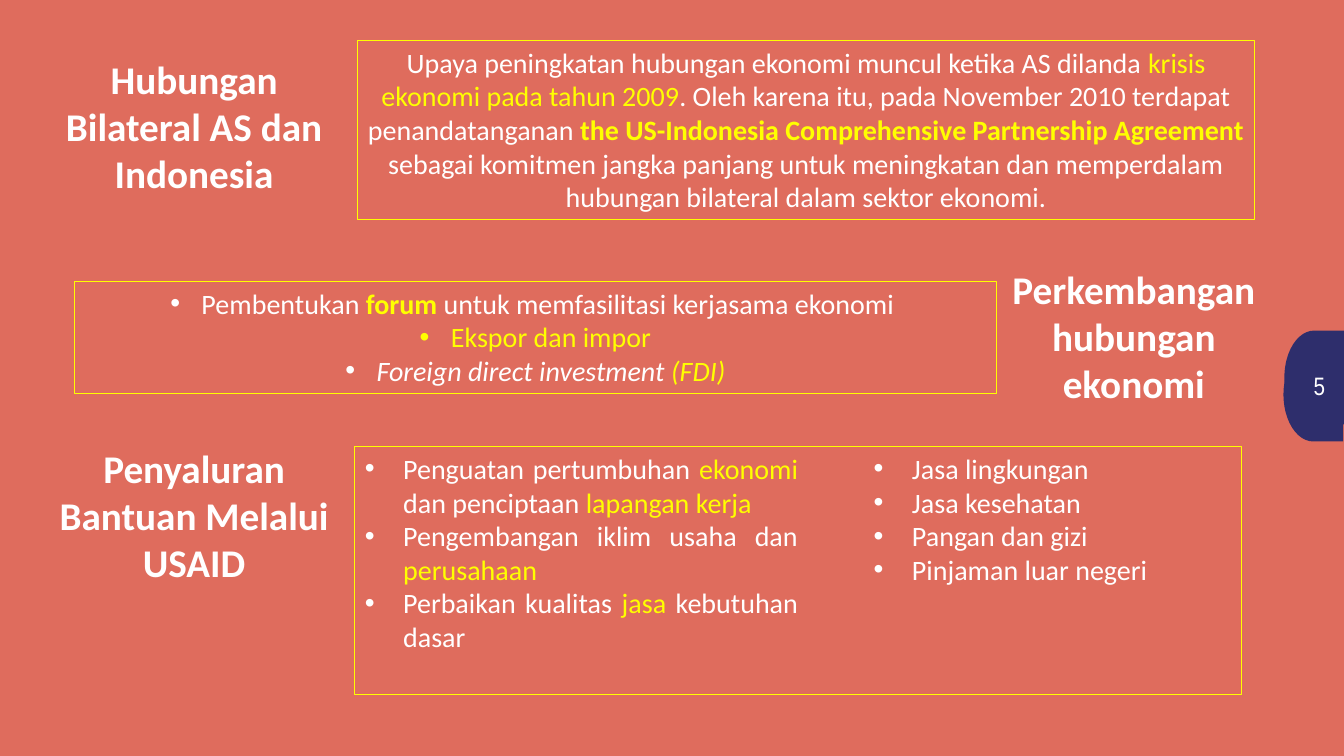
from pptx import Presentation
from pptx.dml.color import RGBColor
from pptx.enum.shapes import MSO_SHAPE
from pptx.enum.text import MSO_ANCHOR, MSO_AUTO_SIZE, PP_ALIGN
from pptx.oxml.ns import qn
from pptx.util import Inches, Pt

RECTANGLE, DELAY = MSO_SHAPE.RECTANGLE, MSO_SHAPE.FLOWCHART_DELAY
LEFT, CENTER, JUSTIFY = PP_ALIGN.LEFT, PP_ALIGN.CENTER, PP_ALIGN.JUSTIFY
TOP, NO_AUTOFIT = MSO_ANCHOR.TOP, MSO_AUTO_SIZE.NONE
CORAL, NAVY, WHITE, YELLOW = "DF6C5D", "2E2E6C", "FFFFFF", "FFFF00"

presentation = Presentation()
presentation.slide_width = Inches(13.33)
presentation.slide_height = Inches(7.5)
slide = presentation.slides.add_slide(presentation.slide_layouts[5])


def area(left, top, width, height):
    """Turn percentages of the slide into lengths."""
    across, down = presentation.slide_width / 100, presentation.slide_height / 100
    return int(left * across), int(top * down), int(width * across), int(height * down)


def write(frame, paragraphs, size, align, font="Calibri", bold=False):
    """Fill a frame; run styles are y (yellow), b (bold) and i (italic)."""
    frame.word_wrap = True
    frame.auto_size = NO_AUTOFIT
    frame.vertical_anchor = TOP
    for index, runs in enumerate(paragraphs):
        paragraph = frame.add_paragraph() if index else frame.paragraphs[0]
        paragraph.alignment = align
        paragraph.font.name = font
        paragraph.font.size = Pt(size)
        paragraph.font.bold = bold
        for text, style in runs:
            run = paragraph.add_run()
            run.text = text
            run.font.color.rgb = RGBColor.from_string(YELLOW if "y" in style else WHITE)
            if "b" in style:
                run.font.bold = True
            if "i" in style:
                run.font.italic = True


# Background
slide.background.fill.solid()
slide.background.fill.fore_color.rgb = RGBColor.from_string(CORAL)

# Headings: the first is the slide title
headings = [
    ("Hubungan Bilateral AS dan Indonesia", 3, 6.67),
    ("Perkembangan hubungan ekonomi", 72.92, 34.4),
    ("Penyaluran Bantuan Melalui USAID", 3, 58.13),
]
for index, (text, left, top) in enumerate(headings):
    place = area(left, top, 22.88, 20.13)
    heading = slide.shapes.add_textbox(*place) if index else slide.shapes.title
    heading.left, heading.top, heading.width, heading.height = place
    write(heading.text_frame, [[(text, "")]], 28, CENTER, bold=True)

# Page tab with its number
for left, top in [(95.5, 46), (95.57, 43.73)]:
    tab = slide.shapes.add_shape(DELAY, *area(left, top, 4.43, 12.4))
    tab.shadow.inherit = False
    tab.fill.solid()
    tab.fill.fore_color.rgb = RGBColor.from_string(NAVY)
    tab.line.fill.background()
    tab._element.spPr.find(qn("a:xfrm")).set("flipH", "1")
number = slide.shapes.add_textbox(*area(97, 48.27, 3, 7.6))
write(number.text_frame, [[("5", "")]], 18, LEFT, font="Arial Narrow")

# Framed texts: place, alignment, bullet indents, paragraphs
agreement = [[
    ("Upaya peningkatan hubungan ekonomi muncul ketika AS dilanda ", ""),
    ("krisis ekonomi pada tahun 2009", "y"),
    (". Oleh karena itu, pada November 2010 terdapat penandatanganan ", ""),
    ("the US-Indonesia Comprehensive Partnership Agreement ", "yb"),
    ("sebagai komitmen jangka panjang untuk meningkatan dan memperdalam "
     "hubungan bilateral dalam sektor ekonomi.", ""),
]]
development = [
    [("Pembentukan ", ""), ("forum ", "yb"),
     ("untuk memfasilitasi kerjasama ekonomi ", "")],
    [("Ekspor dan impor", "y")],
    [("Foreign direct investment ", "i"), ("(FDI)", "yi")],
]
goals = [
    [("Penguatan pertumbuhan ", ""), ("ekonomi ", "y"),
     ("dan penciptaan ", ""), ("lapangan kerja", "y")],
    [("Pengembangan iklim usaha dan ", ""), ("perusahaan", "y")],
    [("Perbaikan kualitas ", ""), ("jasa ", "y"), ("kebutuhan dasar", "")],
]
services = [[(text, "")] for text in (
    "Jasa lingkungan", "Jasa kesehatan", "Pangan dan gizi", "Pinjaman luar negeri")]

frames = [
    ((5.55, 37.2, 68.57, 14.8), CENTER, [(0.31, 0.31)] * 3, development),
    ((26.63, 5.33, 66.69, 23.73), CENTER, [], agreement),
    ((26.41, 59.07, 65.94, 32.8), JUSTIFY,
     [(0.38, 0.38)] * 3 + [(1.13, 0.38)] * 4, goals + services),
]
for place, align, indents, paragraphs in frames:
    box = slide.shapes.add_shape(RECTANGLE, *area(*place))
    box.shadow.inherit = False
    box.fill.background()
    box.line.color.rgb = RGBColor.from_string(YELLOW)
    box.line.width = Pt(0.75)
    write(box.text_frame, paragraphs, 20, align)
    for paragraph, (margin, hanging) in zip(box.text_frame.paragraphs, indents):
        properties = paragraph._p.get_or_add_pPr()
        properties.set("marL", str(Inches(margin)))
        properties.set("indent", str(-Inches(hanging)))
        bullet_font = properties.makeelement(qn("a:buFont"), {"typeface": "Arial"})
        bullet = properties.makeelement(qn("a:buChar"), {"char": "•"})
        properties.find(qn("a:defRPr")).addprevious(bullet_font)
        bullet_font.addnext(bullet)

# The last frame has two columns; the bottom margin breaks them after the goals
box.text_frame.margin_bottom = Inches(0.3)
box.text_frame._txBody.bodyPr.set("numCol", "2")

presentation.save("out.pptx")
